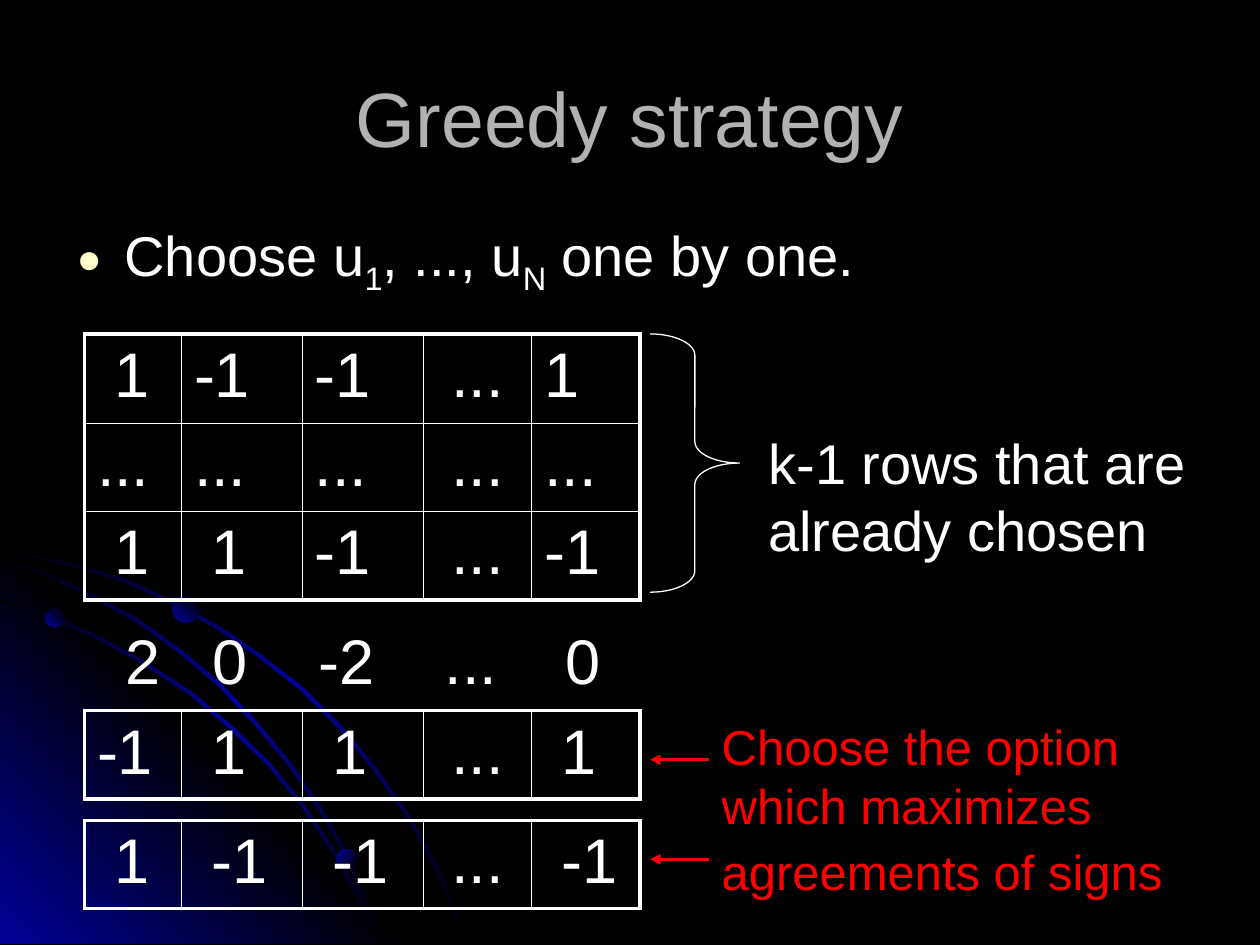
import copy
import pptx
import pptx.util
import pptx.dml.color
import pptx.enum.shapes
import pptx.enum.text
import pptx.oxml
import pptx.oxml.ns

PX = 9144  # EMU in one px, 100 px to the inch
FONT = "Arial"
HUE = {"black": "000000", "blue": "010199", "grey": "B2B2B2",
       "white": "FFFFFF", "cream": "FFFFCC", "red": "FF0000"}
SHAPE = pptx.enum.shapes.MSO_SHAPE
ALIGN = pptx.enum.text.PP_ALIGN
COLS = [77, 96, 96, 86, 86]
ARCS = [
    [(0, 436), (28, 442), (56, 448), (97, 460), (135, 477), (173, 498),
     (208, 522), (241, 548), (271, 578), (298, 611), (324, 648), (338, 673),
     (351, 698), (361, 723), (371, 749)],
    [(0, 476), (40, 489), (78, 506), (116, 527), (151, 550), (183, 577),
     (214, 607), (241, 640), (265, 676), (285, 713), (295, 731), (302, 749)],
    [(0, 443), (37, 456), (75, 474), (110, 493), (143, 517), (174, 543),
     (203, 574), (228, 604), (253, 640), (268, 666), (281, 693), (293, 721),
     (302, 749)],
]


def emu(*nums):
    return [pptx.util.Emu(n * PX) for n in nums]


def rgb(name):
    return pptx.dml.color.RGBColor.from_string(HUE[name])


def node(tag, **attrs):
    item = pptx.oxml.parse_xml(f"<a:{tag} {pptx.oxml.ns.nsdecls('a')}/>")
    for key, val in attrs.items():
        item.set(key, str(val))
    return item


def tint(tag, name):
    item = node(tag)
    item.append(node("srgbClr", val=HUE[name]))
    return item


def blend(shape, names, angle):
    """Fill a shape with evenly spaced colours; angle runs clockwise."""
    shape.shadow.inherit = False
    shape.line.fill.background()
    shape.fill.gradient()
    shape.fill.gradient_angle = 360 - angle
    stops = shape._element.spPr.find(".//" + pptx.oxml.ns.qn("a:gsLst"))
    while len(stops) < len(names):
        stops.append(copy.deepcopy(stops[0]))
    for i, (stop, name) in enumerate(zip(shape.fill.gradient_stops, names)):
        stop.position = i / (len(names) - 1)
        stop.color.rgb = rgb(name)


def add_run(para, text, size, color, base=0):
    run = para.add_run()
    run.text = text
    run.font.name = FONT
    run.font.size = pptx.util.Pt(size)
    run.font.color.rgb = rgb(color)
    if base:
        run._r.get_or_add_rPr().set("baseline", str(base * 1000))


def add_text(slide, box, lines, size, color):
    """Each line is a list of (text, baseline) runs."""
    frame = slide.shapes.add_textbox(*emu(*box)).text_frame
    frame.word_wrap = True
    for i, line in enumerate(lines):
        para = frame.add_paragraph() if i else frame.paragraphs[0]
        for text, base in line:
            add_run(para, text, size, color, base)
    return frame


def add_path(slide, points):
    pen = slide.shapes.build_freeform(*points[0], scale=PX)
    pen.add_line_segments(points[1:], close=True)
    return pen.convert_to_shape()


def draw_decor(slide, box):
    left, top, width, height = box
    low = top + height

    def band(arc):
        over = [(x + 1 if x else 0, y if y == low else y - 1) for x, y in arc]
        under = [(max(x - 1, 0), min(y + 1, low)) for x, y in arc]
        return over + under[::-1]

    # Thin arcs around the corner glow
    trio = ["black", "blue", "black"]
    blend(add_path(slide, band(ARCS[0])), trio, 45)
    glow = add_path(slide, [(left, top), (left + width, low), (left, low)])
    blend(glow, ["blue", "black", "blue"], 315)
    for arc in ARCS[1:]:
        blend(add_path(slide, band(arc)), trio, 45)
    # Beads on the arcs
    for x, y, size, angle in [(36, 56, 15, 315), (267, 247, 16, 45),
                              (137, 46, 21, 315)]:
        bead = slide.shapes.add_shape(
            SHAPE.OVAL, *emu(left + x, top + y, size, size))
        blend(bead, ["blue", "black"], angle)


def draw_title(slide, box):
    frame = add_text(slide, box, [[("Greedy strategy", 0)]], 44, "grey")
    frame.vertical_anchor = pptx.enum.text.MSO_ANCHOR.MIDDLE
    frame.paragraphs[0].alignment = ALIGN.CENTER


def draw_point(slide, box):
    line = [("Choose u", 0), ("1", -25), (", ..., u", 0), ("N", -25),
            (" one by one.", 0)]
    para = add_text(slide, box, [line], 32, "white").paragraphs[0]
    para.space_before = pptx.util.Pt(3)
    props = para._p.get_or_add_pPr()
    props.set("marL", str(38 * PX))
    props.set("indent", str(-38 * PX))
    for item in (tint("buClr", "cream"), node("buSzPct", val=75000),
                 node("buFont", typeface=FONT), node("buChar", char="●")):
        props.append(item)


def draw_grid(slide, box, rows, heights):
    count, last = len(rows), len(COLS) - 1
    shape = slide.shapes.add_table(count, len(COLS), *emu(*box))
    grid = shape.table
    grid.first_row = grid.horz_banding = False
    for col, width in zip(grid.columns, COLS):
        col.width = pptx.util.Emu(width * PX)
    for r, row in enumerate(rows):
        grid.rows[r].height = pptx.util.Emu(heights[r] * PX)
        for c, text in enumerate(row):
            cell = grid.cell(r, c)
            para = cell.text_frame.paragraphs[0]
            add_run(para, text, 36, "white")
            if c == 3:
                para.alignment = ALIGN.CENTER
            # Thick outer edges, thin inner ones
            props = cell._tc.get_or_add_tcPr()
            for tag, outer in [("lnL", c == 0), ("lnR", c == last),
                               ("lnT", r == 0), ("lnB", r == count - 1)]:
                edge = node(tag, w=pptx.util.Pt(2.25 if outer else 1))
                edge.append(tint("solidFill", "white"))
                props.append(edge)
            cell.fill.background()


def draw_brace(slide, box):
    brace = slide.shapes.add_shape(SHAPE.RIGHT_BRACE, *emu(*box))
    brace.adjustments[0] = 0.24
    brace.adjustments[1] = 0.5
    brace.shadow.inherit = False
    brace.fill.background()
    brace.line.color.rgb = rgb("white")
    brace.line.width = pptx.util.Pt(0.75)


def draw_sums(slide, box):
    frame = add_text(slide, box, [[("2\t0\t-2\t...\t0", 0)]], 36, "white")
    tabs = node("tabLst")
    for stop in (69, 153, 253, 349):
        tabs.append(node("tab", pos=stop * PX, algn="l"))
    frame.paragraphs[0]._p.get_or_add_pPr().append(tabs)


def draw_choice(slide, box):
    left, top = box[:2]
    lines = ["Choose the option", "which maximizes", "agreements of signs"]
    frame = add_text(slide, box, [[(t, 0)] for t in lines], 28, "red")
    add_run(frame.paragraphs[-1], " ", 32, "white")
    # Arrows to the two options
    for drop in (39, 118):
        y = top + drop
        arrow = slide.shapes.add_connector(
            pptx.enum.shapes.MSO_CONNECTOR.STRAIGHT,
            *emu(left, y, left - 47, y))
        arrow.line.color.rgb = rgb("red")
        arrow.line.width = pptx.util.Pt(1.5)
        arrow.line._get_or_add_ln().append(node("tailEnd", type="triangle"))
        arrow._element.spPr.append(node("effectLst"))


def main():
    deck = pptx.Presentation()
    deck.slide_width, deck.slide_height = emu(1000, 750)
    slide = deck.slides.add_slide(deck.slide_layouts[6])
    slide.background.fill.solid()
    slide.background.fill.fore_color.rgb = rgb("black")
    draw_decor(slide, (0, 427, 322, 322))
    draw_title(slide, (50, 30, 900, 125))
    draw_point(slide, (51, 170, 891, 80))
    chosen = [[" 1", "-1", "-1", "...", "1"], ["..."] * 5,
              [" 1", " 1", "-1", "...", "-1"]]
    draw_grid(slide, (67, 265, 441, 205), chosen, [71, 67, 67])
    draw_brace(slide, (516, 265, 71, 205))
    add_text(slide, (600, 335, 363, 117),
             [[("k-1 rows that are", 0)], [("already chosen", 0)]],
             32, "white")
    draw_sums(slide, (90, 488, 398, 70))
    for top, row in [(564, ["-1", " 1", " 1", "...", " 1"]),
                     (651, [" 1", " -1", " -1", "...", " -1"])]:
        draw_grid(slide, (67, top, 441, 70), [row], [70])
    draw_choice(slide, (563, 564, 383, 157))
    deck.save("out.pptx")


if __name__ == "__main__":
    main()
